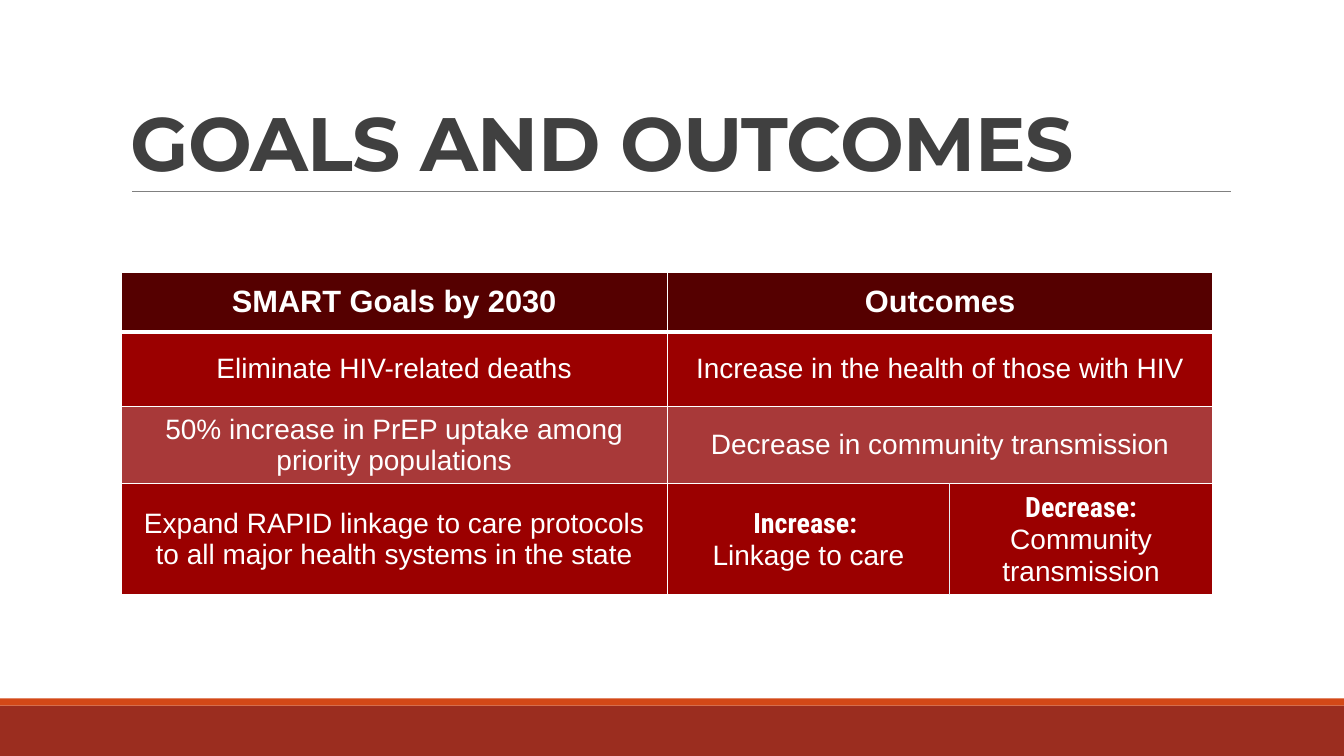
"""Build the goals and outcomes slide."""
from dataclasses import dataclass

import lxml.etree
import pptx
import pptx.dml.color
import pptx.enum.shapes
import pptx.enum.text
import pptx.oxml.ns
import pptx.slide
import pptx.table
import pptx.text.text
import pptx.util

Cm = pptx.util.Cm
Pt = pptx.util.Pt
qn = pptx.oxml.ns.qn

WHITE = "FFFFFF"
DIVIDER = "E9EDF4"
HEADER = "550000"
DARK_ROW = "9B0000"
LIGHT_ROW = "A83939"
COLUMN_WIDTHS = (13.77, 7.11, 6.63)
ROW_HEIGHTS = (1.5, 1.88, 1.8, 2.67)


@dataclass(frozen=True)
class Band:
    top: float
    height: float
    fill: str


@dataclass(frozen=True)
class Phrase:
    text: str
    size: float = 20
    bold: bool = False
    font: str = "Arial"
    color: str = WHITE


@dataclass(frozen=True)
class Entry:
    row: int
    column: int
    fill: str
    paragraphs: tuple[tuple[Phrase, ...], ...]
    span: int = 1


BANDS = (Band(17.78, 1.27, "9B2D1F"), Band(17.6, 0.18, "D34817"))


def lead(text: str) -> Phrase:
    return Phrase(text, bold=True, font="Roboto Condensed")


ENTRIES = (
    Entry(0, 0, HEADER, ((Phrase("SMART Goals by 2030", 22, True),),)),
    Entry(0, 1, HEADER, ((Phrase("Outcomes", 22, True),),), 2),
    Entry(1, 0, DARK_ROW, ((Phrase("Eliminate HIV-related deaths"),),)),
    Entry(1, 1, DARK_ROW, ((Phrase("Increase in the health of those with HIV"),),), 2),
    Entry(2, 0, LIGHT_ROW, ((Phrase("50% increase in PrEP uptake among priority populations"),),)),
    Entry(2, 1, LIGHT_ROW, ((Phrase("Decrease in community transmission"),),), 2),
    Entry(3, 0, DARK_ROW, ((Phrase(
        "Expand RAPID linkage to care protocols to all major health systems in the state"),),)),
    Entry(3, 1, DARK_ROW, ((lead("Increase: "),), (Phrase("Linkage to care"),))),
    Entry(3, 2, DARK_ROW, ((lead("Decrease: "), Phrase("Community transmission")),)),
)


def rgb(color: str) -> pptx.dml.color.RGBColor:
    return pptx.dml.color.RGBColor.from_string(color)


def write(paragraph: pptx.text.text._Paragraph, phrases: tuple[Phrase, ...]) -> None:
    for phrase in phrases:
        run = paragraph.add_run()
        run.text = phrase.text
        run.font.name = phrase.font
        run.font.size = Pt(phrase.size)
        run.font.bold = phrase.bold
        run.font.color.rgb = rgb(phrase.color)


def draw_band(slide: pptx.slide.Slide, band: Band, width: int) -> None:
    stripe = slide.shapes.add_shape(
        pptx.enum.shapes.MSO_SHAPE.RECTANGLE, 0, Cm(band.top), width, Cm(band.height))
    stripe.shadow.inherit = False
    stripe.fill.solid()
    stripe.fill.fore_color.rgb = rgb(band.fill)
    stripe.line.fill.background()


def draw_heading(slide: pptx.slide.Slide) -> None:
    underline = slide.shapes.add_connector(
        pptx.enum.shapes.MSO_CONNECTOR.STRAIGHT, Cm(3.33), Cm(4.83), Cm(31.01), Cm(4.83))
    underline.line.color.rgb = rgb("808080")
    underline.line.width = Pt(0.5)
    lxml.etree.SubElement(underline._element.spPr, qn("a:effectLst"))

    heading = slide.shapes.add_textbox(Cm(3.05), Cm(0.79), Cm(29.39), Cm(4.04)).text_frame
    heading.word_wrap = True
    heading.vertical_anchor = pptx.enum.text.MSO_ANCHOR.BOTTOM
    paragraph = heading.paragraphs[0]
    paragraph.line_spacing = 0.85
    write(paragraph, (Phrase("GOALS AND OUTCOMES", 54, True, "Montserrat", "404040"),))
    paragraph.runs[0]._r.get_or_add_rPr().set("spc", "-50")


def draw_borders(cell: pptx.table._Cell, row: int, column: int) -> None:
    last = len(ROW_HEIGHTS) - 1
    borders = {
        "a:lnL": (DIVIDER if (row, column) == (last, 2) else WHITE, 1),
        "a:lnR": (DIVIDER if (row, column) == (last, 1) else WHITE, 1),
        "a:lnT": (WHITE, 3 if row == 1 else 1),
        "a:lnB": (WHITE, 3 if row == 0 else 1),
    }
    properties = cell._tc.get_or_add_tcPr()
    for tag, (color, width) in borders.items():
        border = lxml.etree.SubElement(properties, qn(tag), w=str(Pt(width)))
        fill = lxml.etree.SubElement(border, qn("a:solidFill"))
        lxml.etree.SubElement(fill, qn("a:srgbClr"), val=color)


def fill_entry(table: pptx.table.Table, entry: Entry) -> None:
    columns = range(entry.column, entry.column + entry.span)
    for column in columns:
        cell = table.cell(entry.row, column)
        draw_borders(cell, entry.row, column)
        cell.fill.solid()
        cell.fill.fore_color.rgb = rgb(entry.fill)
    origin = table.cell(entry.row, entry.column)
    if entry.span > 1:
        origin.merge(table.cell(entry.row, columns[-1]))
    origin.vertical_anchor = pptx.enum.text.MSO_ANCHOR.MIDDLE
    for index, phrases in enumerate(entry.paragraphs):
        frame = origin.text_frame
        paragraph = frame.add_paragraph() if index else frame.paragraphs[0]
        paragraph.alignment = pptx.enum.text.PP_ALIGN.CENTER
        write(paragraph, phrases)


def draw_goals(slide: pptx.slide.Slide) -> None:
    goals = slide.shapes.add_table(
        len(ROW_HEIGHTS), len(COLUMN_WIDTHS), Cm(3.05), Cm(6.86),
        Cm(sum(COLUMN_WIDTHS)), Cm(sum(ROW_HEIGHTS))).table
    goals.first_row = False
    goals.horz_banding = False
    for column, width in zip(goals.columns, COLUMN_WIDTHS):
        column.width = Cm(width)
    for row, height in zip(goals.rows, ROW_HEIGHTS):
        row.height = Cm(height)
    for entry in ENTRIES:
        fill_entry(goals, entry)


def main() -> None:
    presentation = pptx.Presentation()
    presentation.slide_width = Cm(33.87)
    presentation.slide_height = Cm(19.05)
    slide = presentation.slides.add_slide(presentation.slide_layouts[6])
    for band in BANDS:
        draw_band(slide, band, presentation.slide_width)
    draw_heading(slide)
    draw_goals(slide)
    presentation.save("out.pptx")


if __name__ == "__main__":
    main()
